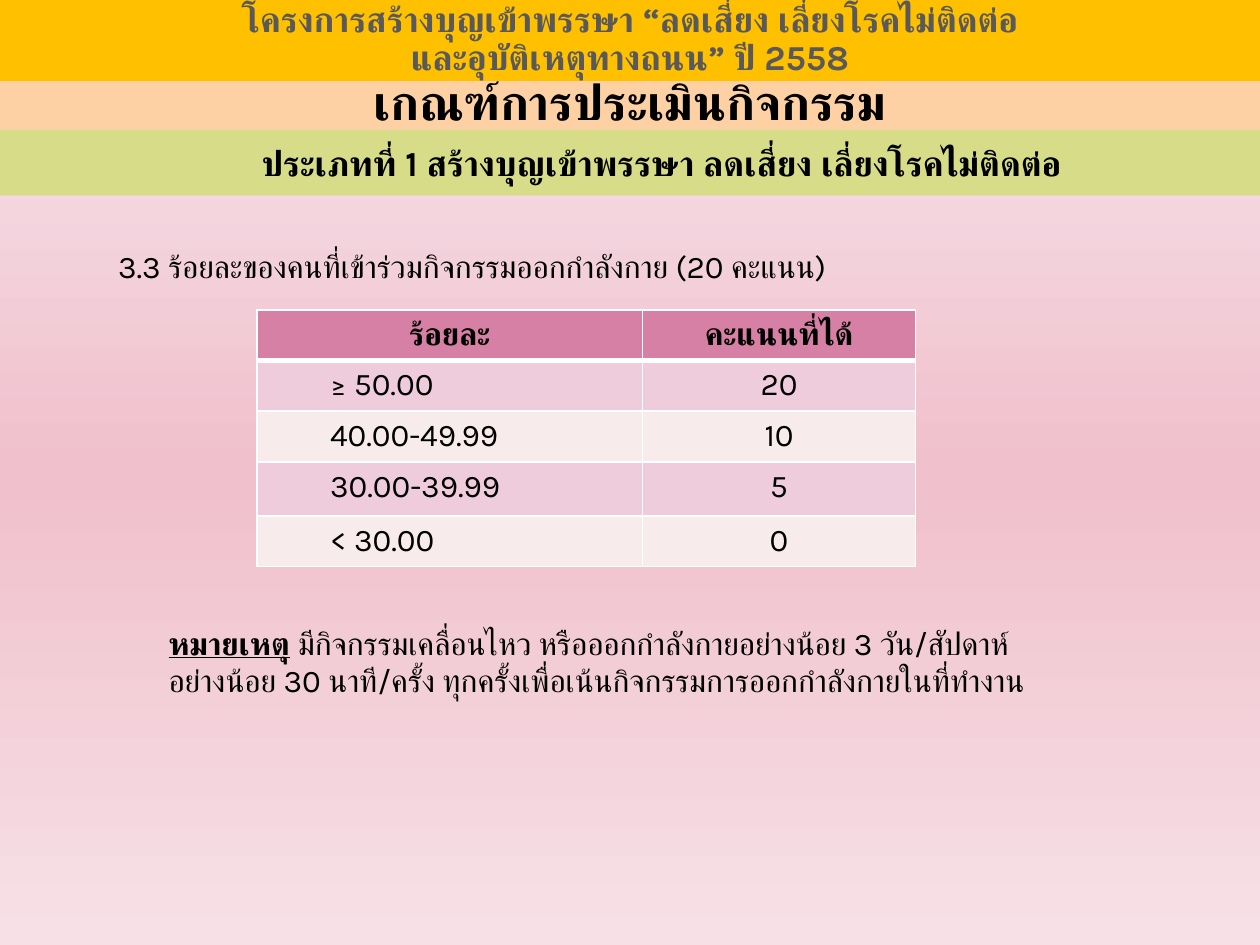
from dataclasses import dataclass

import lxml.etree
import pptx
import pptx.dml.color
import pptx.enum.lang
import pptx.enum.shapes
import pptx.enum.text
import pptx.oxml.ns
import pptx.util
from copy import deepcopy

Cm = pptx.util.Cm
Align = pptx.enum.text.PP_ALIGN
Anchor = pptx.enum.text.MSO_ANCHOR
qn = pptx.oxml.ns.qn


@dataclass(frozen=True)
class Theme:
    font: str = "Karla"
    ink: str = "000000"
    grey: str = "595959"
    gold: str = "FFC000"
    peach: str = "FDD1A4"
    lime: str = "D7DC88"
    rose: str = "D680A5"
    white: str = "FFFFFF"
    rows: tuple = ("EFCCDB", "F8EBEB")
    back: tuple = ((0, "F7E6ED"), (0.5, "F0C0CC"), (1, "F7E0E6"))
    body: int = 18
    head: int = 20
    title: int = 28


@dataclass(frozen=True)
class Run:
    text: str
    bold: bool = False
    under: bool = False


@dataclass(frozen=True)
class Band:
    lines: tuple
    top: float
    height: float
    fill: str
    size: int
    ink: str = "000000"
    anchor: Anchor = Anchor.MIDDLE
    space: float = 1.0
    indent: float = 0


THEME = Theme()
WIDTH = 25.4
INDENT = 1.22

BANDS = (
    Band(("เกณฑ์การประเมินกิจกรรม",), 1.52, 1.24, THEME.peach, THEME.title,
         anchor=Anchor.BOTTOM, space=0.9),
    Band(("โครงการสร้างบุญเข้าพรรษา “ลดเสี่ยง เลี่ยงโรคไม่ติดต่อ",
          "และอุบัติเหตุทางถนน” ปี 2558"),
         0, 1.63, THEME.gold, THEME.head, ink=THEME.grey, space=0.9),
    Band(("ประเภทที่ 1 สร้างบุญเข้าพรรษา ลดเสี่ยง เลี่ยงโรคไม่ติดต่อ",),
         2.62, 1.32, THEME.lime, THEME.head, indent=1.27),
)

SCORES = (
    ("ร้อยละ", "คะแนนที่ได้"),
    ("≥ 50.00", "20"),
    ("40.00-49.99", "10"),
    ("30.00-39.99", "5"),
    ("< 30.00", "0"),
)

NOTE = (
    (Run("หมายเหตุ", bold=True, under=True), Run(" ", bold=True),
     Run("มีกิจกรรมเคลื่อนไหว หรือออกกำลังกายอย่างน้อย 3 วัน/สัปดาห์")),
    "อย่างน้อย 30 นาที/ครั้ง ทุกครั้งเพื่อเน้นกิจกรรมการออกกำลังกายในที่ทำงาน",
)


def tint(code: str) -> pptx.dml.color.RGBColor:
    return pptx.dml.color.RGBColor.from_string(code)


def write(frame, lines, *, size: int = THEME.body, ink: str = THEME.ink,
          bold: bool = False, align: Align = Align.LEFT,
          space: float = 1.0, indent: float = 0) -> None:
    for index, line in enumerate(lines):
        para = frame.add_paragraph() if index else frame.paragraphs[0]
        para.alignment = align
        para.line_spacing = space
        props = para._p.get_or_add_pPr()
        props.set("marL", str(Cm(indent)))
        props.set("indent", "0")
        for part in (Run(line, bold),) if isinstance(line, str) else line:
            run = para.add_run()
            run.text = part.text
            font = run.font
            font.name = THEME.font
            font.size = pptx.util.Pt(size)
            font.bold = part.bold
            font.underline = part.under
            font.color.rgb = tint(ink)
            font.language_id = pptx.enum.lang.MSO_LANGUAGE_ID.THAI
            script = lxml.etree.SubElement(run._r.rPr, qn("a:cs"))
            script.set("typeface", THEME.font)


def paint(slide) -> None:
    fill = slide.background.fill
    fill.gradient()
    fill.gradient_angle = 270
    stops = slide._element.find(".//" + qn("a:gsLst"))
    stops.append(deepcopy(stops[0]))
    for stop, (place, code) in zip(fill.gradient_stops, THEME.back):
        stop.position = place
        stop.color.rgb = tint(code)


def draw_band(slide, band: Band) -> None:
    shape = slide.shapes.add_shape(
        pptx.enum.shapes.MSO_SHAPE.RECTANGLE,
        Cm(0), Cm(band.top), Cm(WIDTH), Cm(band.height))
    shape.shadow.inherit = False
    shape.fill.solid()
    shape.fill.fore_color.rgb = tint(band.fill)
    shape.line.fill.background()
    frame = shape.text_frame
    frame.word_wrap = True
    frame.vertical_anchor = band.anchor
    write(frame, band.lines, size=band.size, ink=band.ink, bold=True,
          align=Align.CENTER, space=band.space, indent=band.indent)


def draw_text(slide, lines, left: float, top: float, width: float,
              height: float, anchor: Anchor, indent: float = 0) -> None:
    box = slide.shapes.add_textbox(Cm(left), Cm(top), Cm(width), Cm(height))
    frame = box.text_frame
    frame.word_wrap = True
    frame.vertical_anchor = anchor
    write(frame, lines, indent=indent)


def edge(cell, side: str, points: float) -> None:
    props = cell._tc.get_or_add_tcPr()
    line = lxml.etree.SubElement(
        props, qn("a:ln" + side), w=str(pptx.util.Pt(points)))
    solid = lxml.etree.SubElement(line, qn("a:solidFill"))
    lxml.etree.SubElement(solid, qn("a:srgbClr"), val=THEME.white)


def draw_table(slide) -> None:
    widths, heights = (7.77, 5.51), (1.02, 1.02, 1.02, 1.09, 1.02)
    table = slide.shapes.add_table(
        len(SCORES), len(widths), Cm(5.18), Cm(6.25),
        Cm(sum(widths)), Cm(sum(heights))).table
    for column, width in zip(table.columns, widths):
        column.width = Cm(width)
    for row, height in zip(table.rows, heights):
        row.height = Cm(height)
    for r, texts in enumerate(SCORES):
        for c, text in enumerate(texts):
            cell = table.cell(r, c)
            label = r > 0 and c == 0
            write(cell.text_frame, (text,), bold=r == 0,
                  align=Align.LEFT if label else Align.CENTER,
                  indent=INDENT if label else 0)
            for side in "LRTB":
                thick = (r, side) in ((0, "B"), (1, "T"))
                edge(cell, side, 3 if thick else 1)
            cell.fill.solid()
            cell.fill.fore_color.rgb = tint(
                THEME.rows[(r - 1) % 2] if r else THEME.rose)


def main() -> None:
    deck = pptx.Presentation()
    deck.slide_width, deck.slide_height = Cm(WIDTH), Cm(19.05)
    slide = deck.slides.add_slide(deck.slide_layouts[6])
    paint(slide)
    for band in BANDS:
        draw_band(slide, band)
    draw_text(slide,
              ("3.3 ร้อยละของคนที่เข้าร่วมกิจกรรมออกกำลังกาย (20 คะแนน)",),
              0.91, 4.85, 18.26, 1.8, Anchor.TOP, INDENT)
    draw_table(slide)
    draw_text(slide, NOTE, 3.15, 12.14, 22.25, 2.39, Anchor.MIDDLE)
    deck.save("out.pptx")


if __name__ == "__main__":
    main()
